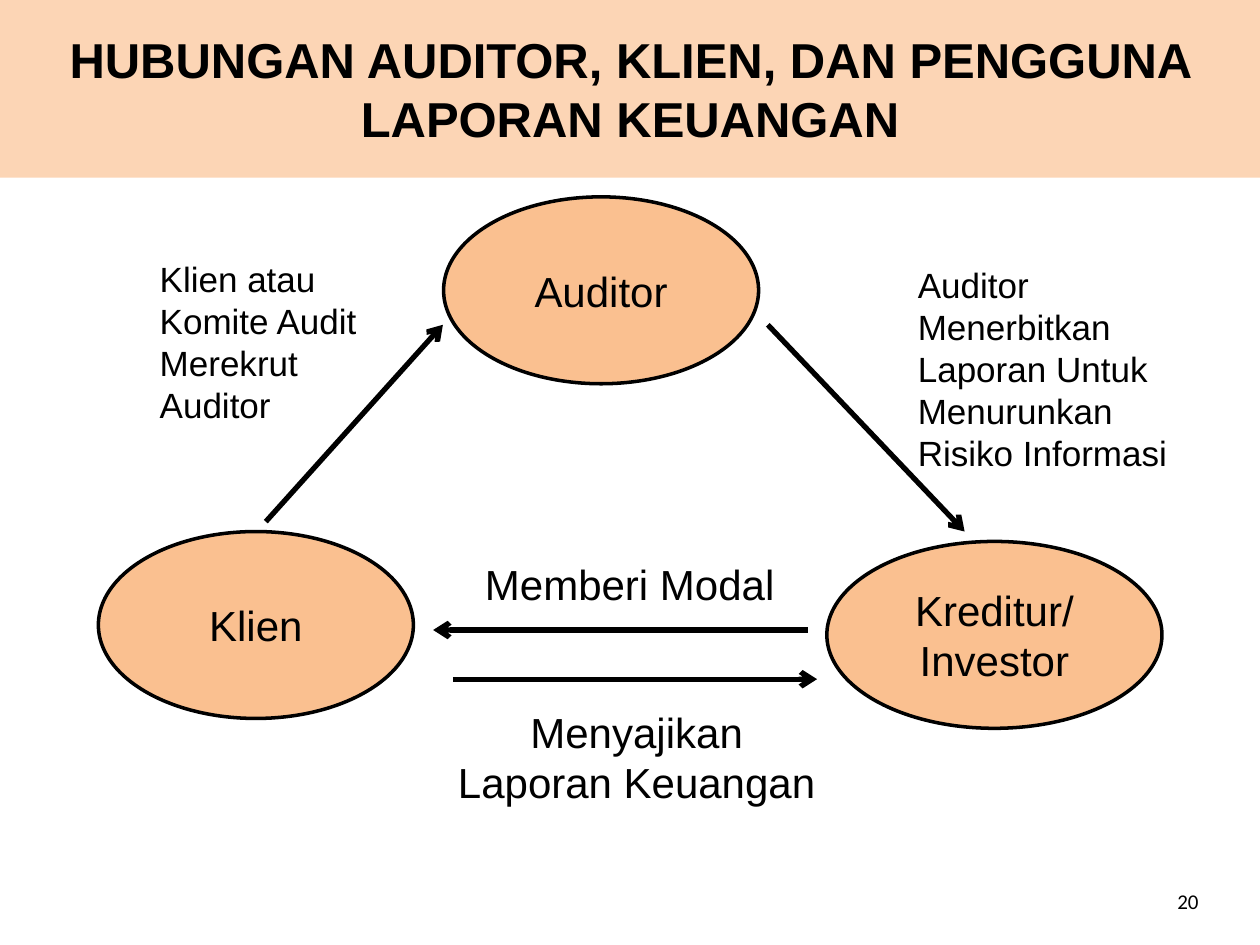
from lxml import etree
from pptx import Presentation
from pptx.dml.color import RGBColor
from pptx.enum.shapes import MSO_CONNECTOR, MSO_SHAPE
from pptx.enum.text import MSO_ANCHOR, PP_ALIGN
from pptx.oxml.ns import qn
from pptx.util import Pt

BLACK = RGBColor(0x00, 0x00, 0x00)
PEACH = RGBColor(0xFC, 0xD5, 0xB5)
ORANGE = RGBColor(0xFA, 0xC0, 0x90)
LEFT, CENTER, RIGHT = PP_ALIGN.LEFT, PP_ALIGN.CENTER, PP_ALIGN.RIGHT
MIDDLE, TOP = MSO_ANCHOR.MIDDLE, MSO_ANCHOR.TOP
OVAL = MSO_SHAPE.OVAL
STRAIGHT = MSO_CONNECTOR.STRAIGHT


def write_text(shape, lines, size, alignment, anchor, wrap, font="Arial", bold=False):
    frame = shape.text_frame
    frame.text = "\n".join(lines)
    frame.word_wrap = wrap
    frame.vertical_anchor = anchor
    for paragraph in frame.paragraphs:
        paragraph.alignment = alignment
        paragraph.font.name = font
        paragraph.font.size = Pt(size)
        paragraph.font.bold = bold
        paragraph.font.color.rgb = BLACK


presentation = Presentation()
presentation.slide_width = Pt(720)
presentation.slide_height = Pt(540)
slide = presentation.slides.add_slide(presentation.slide_layouts[5])
shapes = slide.shapes

# Title band
title = shapes.title
title.left, title.top, title.width, title.height = Pt(0), Pt(0), Pt(720), Pt(101.5)
title.fill.solid()
title.fill.fore_color.rgb = PEACH
write_text(title, ["HUBUNGAN AUDITOR, KLIEN, DAN PENGGUNA LAPORAN KEUANGAN"],
           28, CENTER, MIDDLE, True, bold=True)

# Parties
parties = [
    (253.5, 112.5, 180, ["Auditor"]),
    (56.25, 303.75, 180, ["Klien"]),
    (472.5, 309.4, 191.5, ["Kreditur/", "Investor"]),
]
for left, top, width, lines in parties:
    ellipse = shapes.add_shape(OVAL, Pt(left), Pt(top), Pt(width), Pt(106.8))
    ellipse.shadow.inherit = False
    ellipse.fill.solid()
    ellipse.fill.fore_color.rgb = ORANGE
    ellipse.line.color.rgb = BLACK
    ellipse.line.width = Pt(2)
    write_text(ellipse, lines, 24, CENTER, MIDDLE, True)

# Arrows between the parties
arrows = [
    (461.5, 360, 247.5, 360),
    (258.75, 388.1, 466.9, 388.1),
    (151.9, 298.1, 253.1, 185.6),
    (438.75, 185.6, 551.25, 303.75),
]
for points in arrows:
    arrow = shapes.add_connector(STRAIGHT, *[Pt(value) for value in points])
    arrow.line.color.rgb = BLACK
    arrow.line.width = Pt(3)
    etree.SubElement(arrow.line._get_or_add_ln(), qn("a:tailEnd"), type="arrow")
    etree.SubElement(arrow._element.spPr, qn("a:effectLst"))

# Relationship labels
labels = [
    (270, 315.4, 181.4, 36, 24, LEFT, ["Memberi Modal"]),
    (253.3, 399.9, 221, 65.5, 24, CENTER, ["Menyajikan", "Laporan Keuangan"]),
    (84.2, 143.5, 128, 104.4, 20, LEFT,
     ["Klien atau", "Komite Audit", "Merekrut", "Auditor"]),
    (517.4, 147, 158.4, 128.2, 20, LEFT,
     ["Auditor", "Menerbitkan", "Laporan Untuk", "Menurunkan", "Risiko Informasi"]),
]
for left, top, width, height, size, alignment, lines in labels:
    label = shapes.add_textbox(Pt(left), Pt(top), Pt(width), Pt(height))
    write_text(label, lines, size, alignment, TOP, False)

# Slide number
number = shapes.add_textbox(Pt(658), Pt(500.5), Pt(34), Pt(28.8))
write_text(number, ["20"], 12, RIGHT, MIDDLE, True, font="Calibri")

presentation.save("out.pptx")
